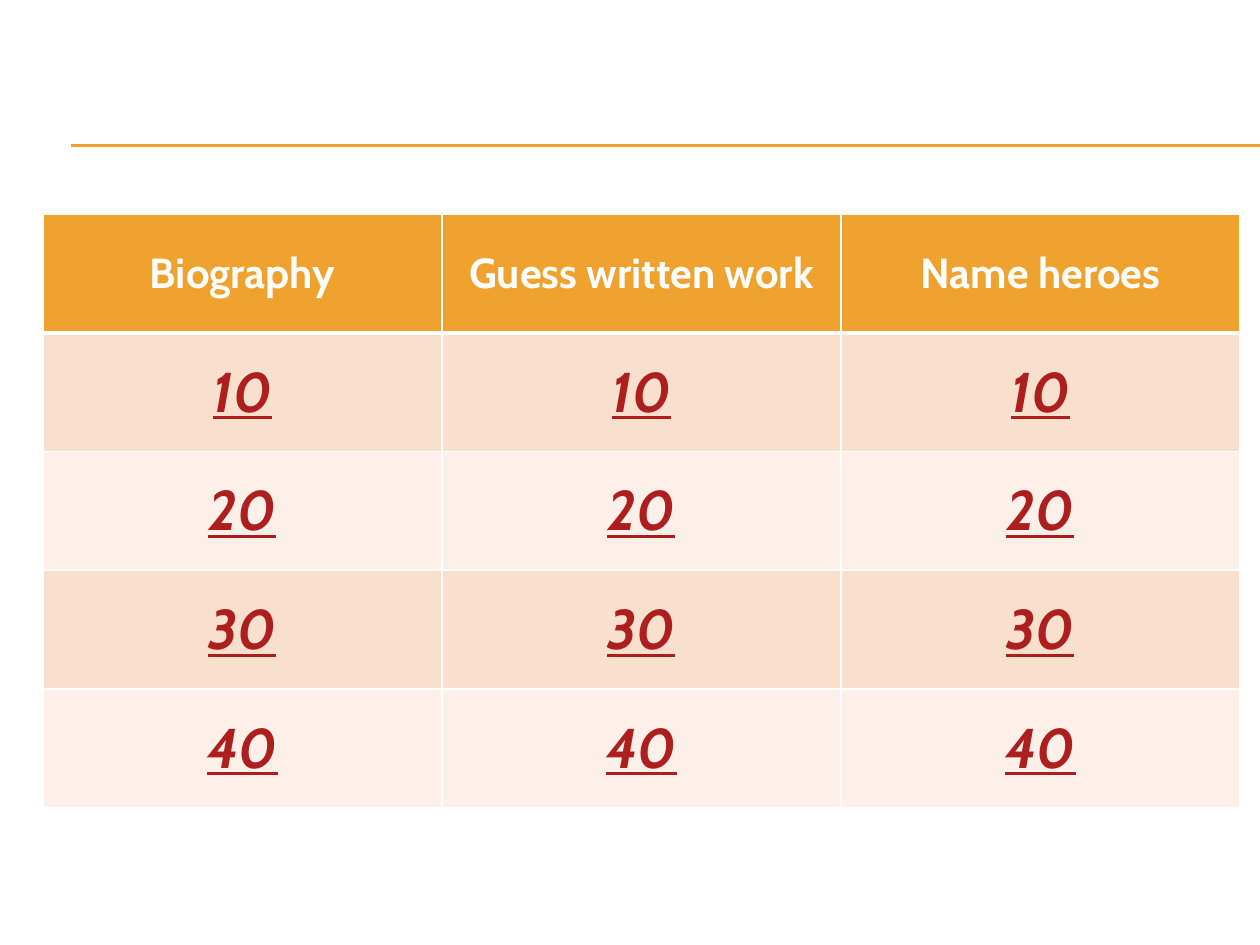
from dataclasses import dataclass

from lxml.etree import SubElement
from pptx import Presentation
from pptx.dml.color import RGBColor
from pptx.enum.shapes import MSO_CONNECTOR as Connector
from pptx.enum.text import MSO_ANCHOR as Anchor, PP_ALIGN as Align
from pptx.oxml.ns import qn
from pptx.util import Inches, Pt


@dataclass(frozen=True)
class Theme:
    font: str = "Cabin"
    accent: str = "F0A22E"
    points: str = "AD1F1F"
    light: str = "FFFFFF"
    bands: tuple = ("F9E0CD", "FCF0E8")
    heading_size: int = 24
    points_size: int = 32
    rule_width: float = 0.75
    border: int = 1
    header_border: int = 3


class Board:
    def __init__(self, deck, theme):
        self.theme = theme
        self.width, self.height = deck.slide_width, deck.slide_height
        self.slide = deck.slides.add_slide(deck.slide_layouts[6])

    def x(self, share):
        return round(self.width * share)

    def y(self, share):
        return round(self.height * share)

    def rule(self, left, right, level):
        rule = self.slide.shapes.add_connector(
            Connector.STRAIGHT, self.x(left), self.y(level), self.x(right), self.y(level))
        rule.line.color.rgb = RGBColor.from_string(self.theme.accent)
        rule.line.width = Pt(self.theme.rule_width)
        SubElement(rule._element.spPr, qn("a:effectLst"))

    def border(self, cell, side, width):
        properties = cell._tc.get_or_add_tcPr()
        edge = SubElement(properties, qn(f"a:ln{side}"), w=str(Pt(width)))
        fill = SubElement(edge, qn("a:solidFill"))
        SubElement(fill, qn("a:srgbClr"), val=self.theme.light)

    def cell(self, cell, text, row):
        theme, heading = self.theme, row == 0
        widths = {"L": theme.border, "R": theme.border,
                  "T": theme.header_border if row == 1 else theme.border,
                  "B": theme.header_border if heading else theme.border}
        for side, width in widths.items():
            self.border(cell, side, width)
        cell.fill.solid()
        cell.fill.fore_color.rgb = RGBColor.from_string(
            theme.accent if heading else theme.bands[(row - 1) % 2])
        cell.vertical_anchor = Anchor.MIDDLE
        cell.text_frame.text = text
        paragraph = cell.text_frame.paragraphs[0]
        paragraph.alignment = Align.CENTER
        font = paragraph.runs[0].font
        font.name, font.bold = theme.font, True
        font.size = Pt(theme.heading_size if heading else theme.points_size)
        font.color.rgb = RGBColor.from_string(theme.light if heading else theme.points)
        font.italic = font.underline = not heading

    def table(self, left, top, width, height, rows):
        table = self.slide.shapes.add_table(
            len(rows), len(rows[0]), self.x(left), self.y(top),
            self.x(width), self.y(height)).table
        for row, texts in enumerate(rows):
            for column, text in enumerate(texts):
                self.cell(table.cell(row, column), text, row)


def main():
    deck = Presentation()
    deck.slide_width, deck.slide_height = Inches(10), Inches(7.5)
    board = Board(deck, Theme())
    for level in (1.15, 1.16):
        board.rule(0.056, 1, level / 7.5)
    categories = ["Biography", "Guess written work", "Name heroes"]
    points = [[str(value)] * len(categories) for value in range(10, 50, 10)]
    board.table(0.034, 1.7 / 7.5, 0.95, 4.71 / 7.5, [categories, *points])
    deck.save("out.pptx")


if __name__ == "__main__":
    main()
